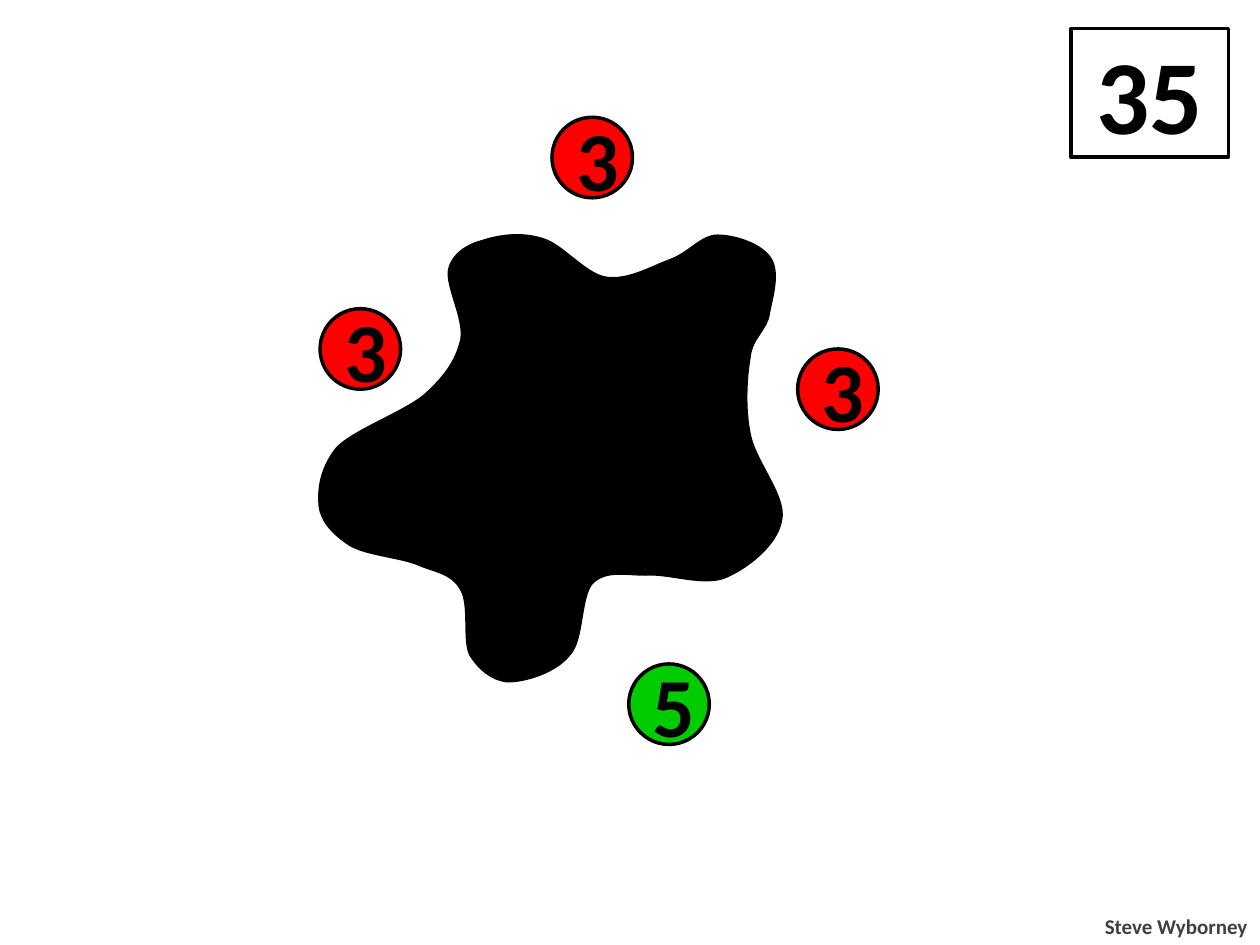
import dataclasses

import pptx
import pptx.dml.color
import pptx.enum.shapes
import pptx.enum.text
import pptx.oxml
import pptx.util

Pt = pptx.util.Pt
RGB = pptx.dml.color.RGBColor.from_string
Shapes = pptx.enum.shapes.MSO_SHAPE
Align = pptx.enum.text.PP_ALIGN


@dataclasses.dataclass(frozen=True)
class Theme:
    """Colours, type sizes and line width of the slide."""
    font: str = "Calibri"
    ink: str = "000000"
    paper: str = "FFFFFF"
    red: str = "FF0000"
    green: str = "00CC00"
    grey: str = "404040"
    total_size: int = 60
    dot_size: int = 48
    credit_size: int = 12
    line_width: int = 2


THEME = Theme()
DOT_DIAMETER = 46
DOTS = [
    (315.4, 67, "3", THEME.red),
    (455.8, 199.4, "3", THEME.red),
    (182.9, 176.4, "3", THEME.red),
    (359.3, 379.4, "5", THEME.green),
]
SPLAT_START = (18, 177)
SPLAT_CURVES = [
    ((9, 171), (2, 164), (1, 155)),
    ((0, 145), (2, 133), (11, 122)),
    ((21, 112), (49, 102), (61, 92)),
    ((72, 82), (79, 73), (82, 60)),
    ((84, 48), (73, 29), (75, 20)),
    ((77, 11), (86, 6), (94, 4)),
    ((103, 1), (116, -1), (128, 3)),
    ((139, 6), (152, 23), (164, 25)),
    ((177, 27), (190, 19), (201, 15)),
    ((212, 11), (219, 1), (228, 1)),
    ((238, 1), (253, 6), (258, 14)),
    ((263, 22), (259, 35), (257, 45)),
    ((256, 54), (247, 59), (246, 70)),
    ((244, 82), (243, 99), (246, 114)),
    ((249, 130), (267, 150), (264, 163)),
    ((262, 177), (244, 191), (231, 196)),
    ((218, 200), (200, 193), (187, 194)),
    ((175, 194), (164, 191), (156, 199)),
    ((149, 207), (151, 232), (143, 240)),
    ((135, 250), (118, 255), (108, 255)),
    ((99, 254), (92, 248), (87, 240)),
    ((83, 232), (87, 212), (82, 203)),
    ((77, 194), (70, 193), (59, 189)),
    ((49, 184), (28, 183), SPLAT_START),
]


def style_shape(shape, fill):
    """Give a shape a flat fill and the common outline."""
    shape.shadow.inherit = False
    shape.fill.solid()
    shape.fill.fore_color.rgb = RGB(fill)
    shape.line.color.rgb = RGB(THEME.ink)
    shape.line.width = Pt(THEME.line_width)


def write_text(shape, text, size, color, alignment):
    """Write one bold line of text into a shape."""
    shape.text_frame.text = text
    paragraph = shape.text_frame.paragraphs[0]
    paragraph.alignment = alignment
    font = paragraph.runs[0].font
    font.name, font.size, font.bold = THEME.font, Pt(size), True
    font.color.rgb = RGB(color)


def add_number(slide, kind, box, text, size, fill):
    """Add a filled shape with a centred number."""
    shape = slide.shapes.add_shape(kind, *map(Pt, box))
    style_shape(shape, fill)
    write_text(shape, text, size, THEME.ink, Align.CENTER)
    shape.text_frame.vertical_anchor = pptx.enum.text.MSO_ANCHOR.MIDDLE


def add_credit(slide, box):
    """Add the author's name, aligned to the right edge of the box."""
    text_box = slide.shapes.add_textbox(*map(Pt, box))
    write_text(text_box, "Steve Wyborney", THEME.credit_size, THEME.grey, Align.RIGHT)
    text_box.text_frame.word_wrap = False
    text_box.text_frame.auto_size = pptx.enum.text.MSO_AUTO_SIZE.SHAPE_TO_FIT_TEXT


def add_splat(slide, left, top):
    """Add the ink splat, turning each three vertices into one Bézier curve."""
    builder = slide.shapes.build_freeform(*SPLAT_START, scale=Pt(1))
    builder.add_line_segments([point for curve in SPLAT_CURVES for point in curve])
    splat = builder.convert_to_shape(Pt(left), Pt(top))
    style_shape(splat, THEME.ink)
    outline = splat._element.xpath(".//a:path")[0]
    lines = outline.xpath("a:lnTo")
    for first in range(0, len(lines), 3):
        curve = pptx.oxml.parse_xml(
            '<a:cubicBezTo xmlns:a="http://schemas.openxmlformats.org/drawingml/2006/main"/>'
        )
        lines[first].addprevious(curve)
        for line in lines[first:first + 3]:
            curve.append(line[0])
            outline.remove(line)


def add_dots(slide):
    """Add the numbered dots around the splat."""
    for left, top, text, fill in DOTS:
        box = (left, top, DOT_DIAMETER, DOT_DIAMETER)
        add_number(slide, Shapes.OVAL, box, text, THEME.dot_size, fill)


def main():
    """Build and save the slide."""
    presentation = pptx.Presentation()
    presentation.slide_width, presentation.slide_height = Pt(720), Pt(540)
    slide = presentation.slides.add_slide(presentation.slide_layouts[6])
    total_box = (612, 16.3, 90, 73.5)
    add_number(slide, Shapes.RECTANGLE, total_box, "35", THEME.total_size, THEME.paper)
    add_credit(slide, (623.5, 518.4, 96.5, 21.6))
    add_dots(slide)
    add_splat(slide, 182, 134)
    presentation.save("out.pptx")


if __name__ == "__main__":
    main()
